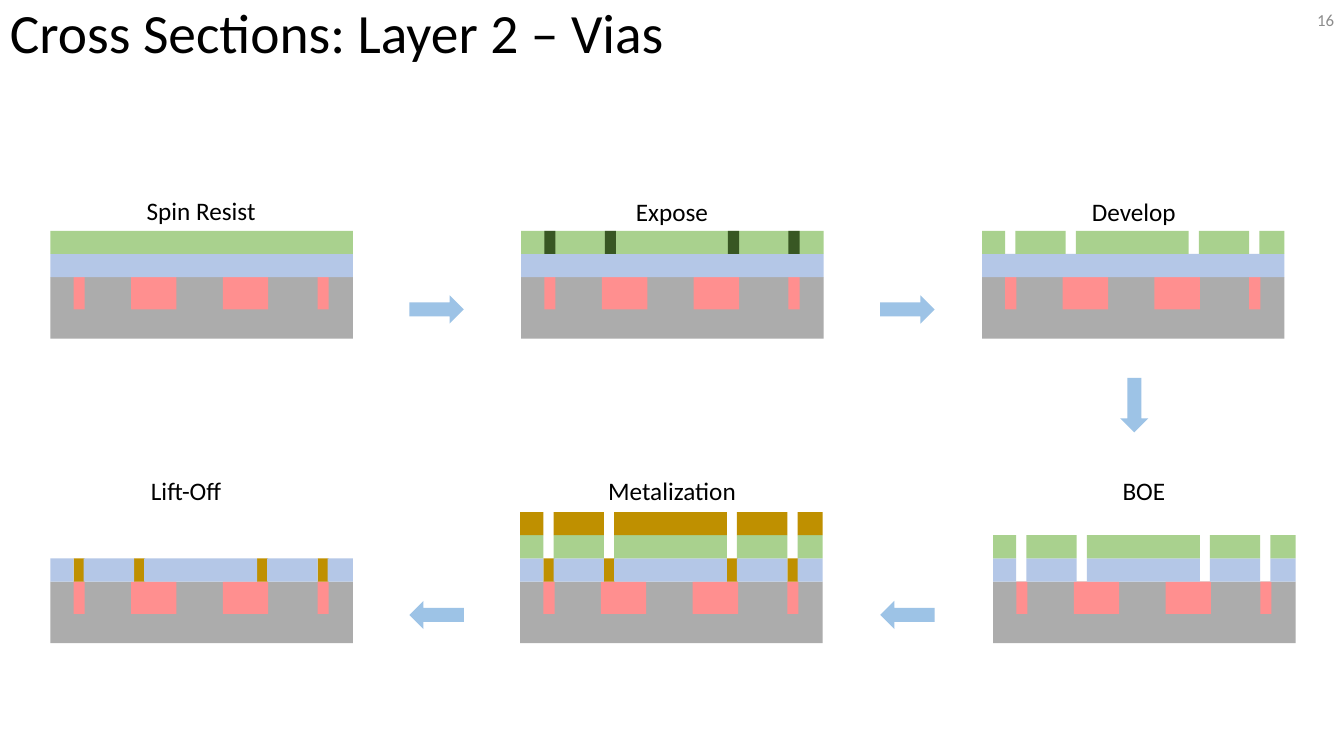
from dataclasses import dataclass
from typing import Any

import pptx
import pptx.dml.color
import pptx.enum.shapes
import pptx.enum.text
import pptx.util

Inches = pptx.util.Inches
RGBColor = pptx.dml.color.RGBColor
Shape = pptx.enum.shapes.MSO_SHAPE
Align = pptx.enum.text.PP_ALIGN
Anchor = pptx.enum.text.MSO_ANCHOR

# Colours
SILICON = RGBColor(0xAC, 0xAC, 0xAC)
DOPED = RGBColor(0xFF, 0x8F, 0x8F)
OXIDE = RGBColor(0xB4, 0xC7, 0xE7)
RESIST = RGBColor(0xA9, 0xD1, 0x8E)
EXPOSED = RGBColor(0x38, 0x57, 0x23)
METAL = RGBColor(0xBF, 0x90, 0x00)
ARROW = RGBColor(0x9D, 0xC3, 0xE6)
BLACK = RGBColor(0, 0, 0)
GREY = RGBColor(0x8C, 0x8C, 0x8C)

# Cross-section geometry in inches, measured from the left edge of a wafer
WAFER_WIDTH, WAFER_HEIGHT = 3.0, 0.61
FILM_HEIGHT = 0.23
DOPED_HEIGHT = 0.32
VIA_WIDTH, OPENING_WIDTH = 0.11, 0.1
VIA_LEFTS = (0.23, 0.83, 2.05, 2.65)
DOPED_SPANS = ((0.23, 0.11), (0.8, 0.45), (1.71, 0.45), (2.65, 0.11))
VIA_SPANS = tuple((left, VIA_WIDTH) for left in VIA_LEFTS)
WHOLE_SPAN = ((0.0, WAFER_WIDTH),)
# The film that remains between the openings
OPEN_SPANS = tuple(
    (start, end - start)
    for start, end in zip(
        (0.0, *(left + OPENING_WIDTH for left in VIA_LEFTS)), (*VIA_LEFTS, WAFER_WIDTH)
    )
)

Spans = tuple[tuple[float, float], ...]


@dataclass(frozen=True)
class Film:
    level: int  # 1 lies directly on the silicon
    color: RGBColor
    spans: Spans = WHOLE_SPAN


@dataclass(frozen=True)
class Step:
    name: str
    label_left: float
    label_top: float
    left: float
    surface: float  # top of the silicon
    films: tuple[Film, ...]


@dataclass(frozen=True)
class Arrow:
    left: float
    top: float
    rotation: int = 0


TOP_ROW, BOTTOM_ROW = 2.75, 5.77
OPEN_OXIDE = Film(1, OXIDE, OPEN_SPANS)
OPEN_RESIST = Film(2, RESIST, OPEN_SPANS)
VIA_METAL = Film(1, METAL, VIA_SPANS)

STEPS = (
    Step("Spin Resist", 1.24, 1.89, 0.5, TOP_ROW, (Film(1, OXIDE), Film(2, RESIST))),
    Step("Expose", 5.91, 1.9, 5.17, TOP_ROW,
         (Film(1, OXIDE), Film(2, RESIST), Film(2, EXPOSED, VIA_SPANS))),
    Step("Develop", 10.49, 1.9, 9.74, TOP_ROW, (Film(1, OXIDE), OPEN_RESIST)),
    Step("BOE", 10.59, 4.67, 9.85, BOTTOM_ROW, (OPEN_OXIDE, OPEN_RESIST)),
    Step("Metalization", 5.91, 4.67, 5.16, BOTTOM_ROW,
         (VIA_METAL, OPEN_OXIDE, OPEN_RESIST, Film(3, METAL, OPEN_SPANS))),
    Step("Lift-Off", 1.09, 4.67, 0.5, BOTTOM_ROW, (VIA_METAL, OPEN_OXIDE)),
)

ARROWS = (
    Arrow(4.06, 2.93),
    Arrow(8.73, 2.93),
    Arrow(10.98, 3.88, 90),
    Arrow(8.73, 5.96, 180),
    Arrow(4.06, 5.96, 180),
)


def add_block(shapes: Any, kind: Any, left: float, top: float, width: float,
              height: float, color: RGBColor) -> Any:
    block = shapes.add_shape(kind, Inches(left), Inches(top), Inches(width), Inches(height))
    block.shadow.inherit = False
    block.fill.solid()
    block.fill.fore_color.rgb = color
    block.line.fill.background()
    return block


def add_text(page: Any, text: str, *, left: float, top: float, width: float,
             height: float, size: float, color: RGBColor = BLACK,
             align: Any = Align.LEFT, anchor: Any = Anchor.TOP,
             line_spacing: float = 1.0) -> None:
    box = page.shapes.add_textbox(Inches(left), Inches(top), Inches(width), Inches(height))
    frame = box.text_frame
    frame.word_wrap = True
    frame.vertical_anchor = anchor
    para = frame.paragraphs[0]
    para.alignment = align
    para.line_spacing = line_spacing
    span = para.add_run()
    span.text = text
    span.font.name = "Calibri"
    span.font.size = pptx.util.Pt(size)
    span.font.color.rgb = color


def draw_step(page: Any, step: Step) -> None:
    section = page.shapes.add_group_shape()
    add_block(section.shapes, Shape.RECTANGLE, step.left, step.surface,
              WAFER_WIDTH, WAFER_HEIGHT, SILICON)
    for offset, width in DOPED_SPANS:
        add_block(section.shapes, Shape.RECTANGLE, step.left + offset, step.surface,
                  width, DOPED_HEIGHT, DOPED)
    for film in step.films:
        top = step.surface - film.level * FILM_HEIGHT
        for offset, width in film.spans:
            add_block(section.shapes, Shape.RECTANGLE, step.left + offset, top,
                      width, FILM_HEIGHT, film.color)
    add_text(page, step.name, left=step.label_left, top=step.label_top,
             width=1.51, height=0.4, size=18, align=Align.CENTER)


def draw_arrow(page: Any, arrow: Arrow) -> None:
    block = add_block(page.shapes, Shape.RIGHT_ARROW, arrow.left, arrow.top, 0.54, 0.28, ARROW)
    block.rotation = arrow.rotation


def main() -> None:
    deck = pptx.Presentation()
    deck.slide_width, deck.slide_height = Inches(13.33), Inches(7.5)
    page = deck.slides.add_slide(deck.slide_layouts[6])

    # Title and page number
    add_text(page, "Cross Sections: Layer 2 – Vias", left=0, top=0, width=13.33,
             height=0.7, size=39.6, anchor=Anchor.MIDDLE, line_spacing=0.9)
    add_text(page, "16", left=12.92, top=0, width=0.41, height=0.4, size=12,
             color=GREY, align=Align.RIGHT, anchor=Anchor.MIDDLE)

    # Process flow
    for step in STEPS:
        draw_step(page, step)
    for arrow in ARROWS:
        draw_arrow(page, arrow)

    deck.save("out.pptx")


if __name__ == "__main__":
    main()
